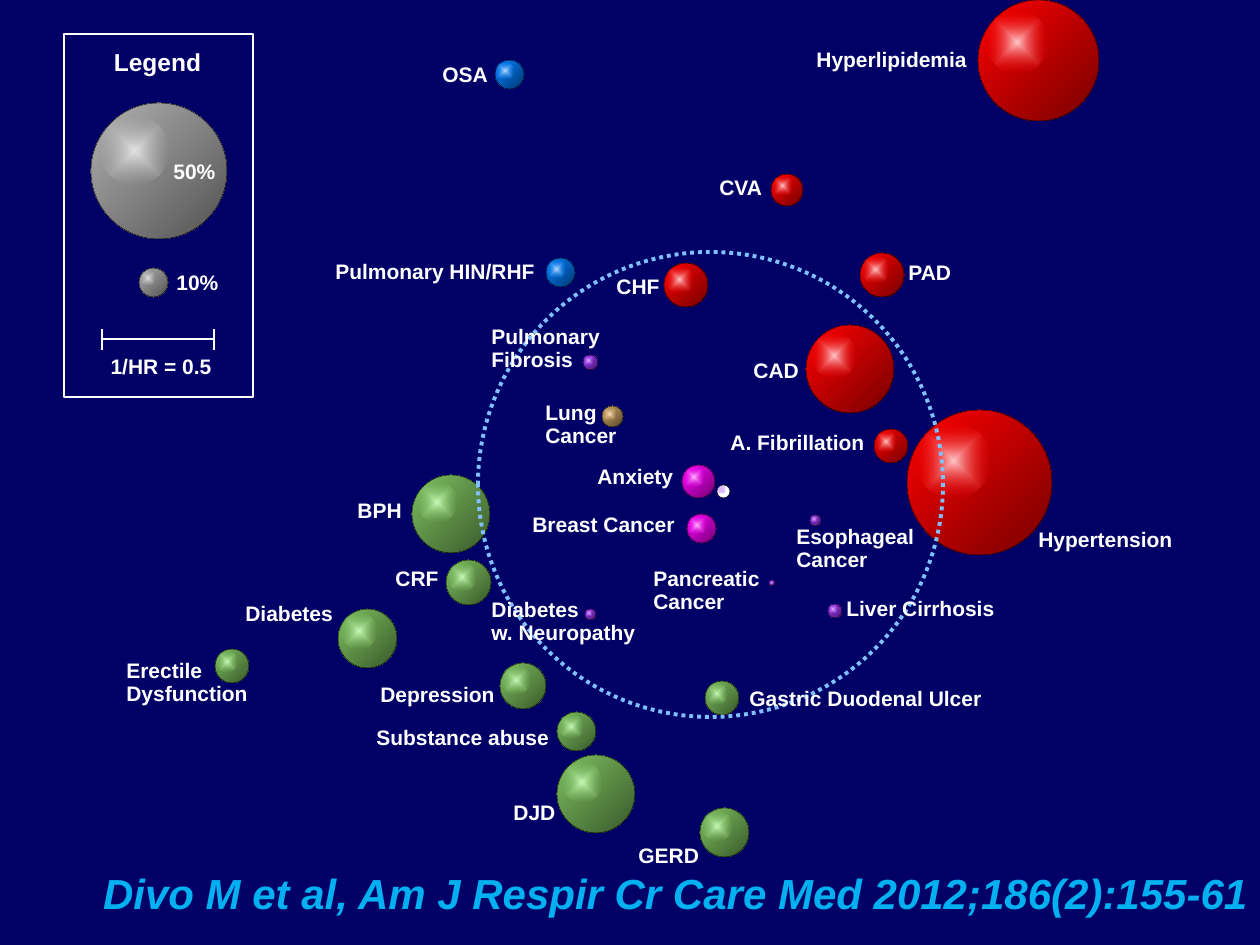
from dataclasses import dataclass
from lxml import etree
from pptx import Presentation
from pptx.dml.color import RGBColor
from pptx.enum.dml import MSO_LINE
from pptx.enum.shapes import MSO_CONNECTOR, MSO_SHAPE
from pptx.enum.text import MSO_AUTO_SIZE, PP_ALIGN
from pptx.oxml import parse_xml
from pptx.oxml.ns import nsdecls, qn
from pptx.util import Pt

SCALE = 914400 / 126
OVAL = MSO_SHAPE.OVAL
RECT = MSO_SHAPE.RECTANGLE
STRAIGHT = MSO_CONNECTOR.STRAIGHT
DOTS = MSO_LINE.ROUND_DOT
GROW = MSO_AUTO_SIZE.SHAPE_TO_FIT_TEXT
LEFT, MID, RIGHT = PP_ALIGN.LEFT, PP_ALIGN.CENTER, PP_ALIGN.RIGHT
LINEAR = '<a:lin ang="2700000" scaled="1"/>'
CENTRAL = '<a:path path="shape"><a:fillToRect l="50000" t="50000" r="50000" b="50000"/></a:path>'

COLORS = {
    "back": "000066", "white": "FFFFFF", "black": "000000",
    "ring": "80C0FF", "cite": "00B0F0",
    "gray": "B2B2B2", "gray_dark": "525252", "gray_glow": "E4E4E4",
    "red": "FF0000", "red_dark": "760000", "red_glow": "FFC9CC",
    "blue": "0080FF", "blue_dark": "003B76", "blue_glow": "BFDFFF",
    "pink": "FF00FF", "pink_dark": "760076", "pink_glow": "FFBDFE",
    "tan": "CCA466", "tan_dark": "5E4C2F", "tan_glow": "FFE2BB",
    "plum": "A338FF", "plum_dark": "4B1A76", "plum_glow": "E4BDFE",
    "green": "7EC160", "green_dark": "3A592C", "green_glow": "C8FBB9",
}


@dataclass
class Ball:
    x: int
    y: int
    size: int
    hue: str
    plain: bool = False


@dataclass
class Label:
    text: str
    x: int
    y: int
    w: int
    h: int = 35


KEYS = [Ball(91, 103, 136, "gray"), Ball(139, 268, 29, "gray")]

BALLS = [
    Ball(664, 263, 44, "red"),
    Ball(771, 174, 32, "red"),
    Ball(806, 325, 88, "red"),
    Ball(907, 410, 145, "red"),
    Ball(860, 253, 44, "red"),
    Ball(874, 429, 34, "red"),
    Ball(978, 0, 121, "red"),
    Ball(495, 60, 29, "blue"),
    Ball(546, 258, 29, "blue"),
    Ball(687, 514, 29, "pink"),
    Ball(682, 465, 33, "pink"),
    Ball(602, 406, 21, "tan"),
    Ball(717, 485, 13, "plum", plain=True),
    Ball(810, 515, 11, "plum"),
    Ball(828, 604, 14, "plum"),
    Ball(769, 580, 6, "plum"),
    Ball(585, 609, 11, "plum"),
    Ball(583, 355, 15, "plum"),
    Ball(705, 681, 34, "green"),
    Ball(557, 712, 39, "green"),
    Ball(500, 663, 46, "green"),
    Ball(446, 560, 45, "green"),
    Ball(338, 609, 59, "green"),
    Ball(412, 475, 78, "green"),
    Ball(700, 808, 49, "green"),
    Ball(215, 649, 34, "green"),
    Ball(557, 755, 78, "green"),
]

LABELS = [
    Label("50%", 161, 155, 81),
    Label("10%", 164, 266, 81),
    Label("Lung Cancer", 533, 396, 129, 58),
    Label("Anxiety", 585, 460, 129),
    Label("Breast Cancer", 520, 508, 189),
    Label("Esophageal Cancer", 784, 520, 151, 58),
    Label("Pancreatic Cancer", 641, 562, 150, 58),
    Label("A. Fibrillation", 718, 426, 169),
    Label("CAD", 741, 354, 83),
    Label("BPH", 345, 494, 83),
    Label("CRF", 383, 562, 84),
    Label("Erectile Dysfunction", 114, 654, 163, 58),
    Label("Diabetes", 233, 597, 174),
    Label("Depression", 368, 678, 174),
    Label("Substance abuse", 364, 721, 212),
    Label("GERD", 626, 839, 106),
    Label("DJD", 501, 796, 84),
    Label("Hypertension", 1026, 523, 188),
    Label("CVA", 707, 171, 83),
    Label("Hyperlipidemia", 804, 43, 193),
    Label("OSA", 430, 58, 83),
    Label("Pulmonary HIN/RHF", 323, 255, 251),
    Label("CHF", 604, 270, 83),
    Label("Liver Cirrhosis", 834, 592, 202),
    Label("PAD", 896, 256, 83),
    Label("Pulmonary Fibrosis", 479, 320, 190, 58),
    Label("Diabetes\nw. Neuropathy", 479, 593, 184, 58),
    Label("Gastric Duodenal Ulcer", 737, 682, 272),
]


def px(n: float) -> int:
    return round(n * SCALE)


def tint(key: str) -> RGBColor:
    return RGBColor.from_string(COLORS[key])


def write(slide, label: Label, size=12, color="white", align=LEFT, slant=False, lead=0.9):
    box = slide.shapes.add_textbox(px(label.x), px(label.y), px(label.w), px(label.h))
    frame = box.text_frame
    frame.word_wrap = True
    frame.auto_size = GROW
    frame.text = label.text
    for para in frame.paragraphs:
        para.alignment = align
        para.line_spacing = lead
        font = para.font
        font.name, font.size = "Arial", Pt(size)
        font.bold, font.italic = True, slant
        font.color.rgb = tint(color)


def shape(slide, kind, x: float, y: float, w: float, h: float, line="", width=0.25):
    item = slide.shapes.add_shape(kind, px(x), px(y), px(w), px(h))
    item.shadow.inherit = False
    item.fill.background()
    if line:
        item.line.color.rgb = tint(line)
        item.line.width = Pt(width)
    else:
        item.line.fill.background()
    return item


def blend(item, start: str, end: str, form: str, alpha=100):
    props = item._element.spPr
    grad = parse_xml(
        f'<a:gradFill {nsdecls("a")} rotWithShape="1"><a:gsLst>'
        f'<a:gs pos="0"><a:srgbClr val="{COLORS[start]}"/></a:gs>'
        f'<a:gs pos="100000"><a:srgbClr val="{COLORS[end]}">'
        f'<a:alpha val="{alpha * 1000}"/></a:srgbClr></a:gs>'
        f'</a:gsLst>{form}</a:gradFill>')
    props.replace(props.find(qn("a:noFill")), grad)


def draw(slide, ball: Ball):
    size, hue = ball.size, ball.hue
    body = shape(slide, OVAL, ball.x, ball.y, size, size, "black")
    if ball.plain:
        body.fill.solid()
        body.fill.fore_color.rgb = tint("white")
    else:
        blend(body, hue, f"{hue}_dark", LINEAR)
    large = size > 75 or hue == "gray"
    dx, dy, part = (0.06, 0.09, 0.52) if large else (0.04, 0.06, 0.63)
    glow = shape(slide, OVAL, ball.x + dx * size, ball.y + dy * size, part * size, part * size)
    blend(glow, f"{hue}_glow", hue, CENTRAL, alpha=0)


def rule(slide, x1: int, y1: int, x2: int, y2: int):
    line = slide.shapes.add_connector(STRAIGHT, px(x1), px(y1), px(x2), px(y2))
    line.line.color.rgb = tint("white")
    line.line.width = Pt(1.5)
    etree.SubElement(line._element.spPr, qn("a:effectLst"))


def main():
    deck = Presentation()
    deck.slide_width, deck.slide_height = px(1260), px(945)
    slide = deck.slides.add_slide(deck.slide_layouts[6])
    slide.background.fill.solid()
    slide.background.fill.fore_color.rgb = tint("back")

    shape(slide, RECT, 64, 34, 189, 363, "white", 1)
    write(slide, Label("Legend", 67, 44, 181, 39), size=14, align=MID)
    write(slide, Label("1/HR = 0.5", 74, 350, 174), align=MID)
    rule(slide, 102, 339, 214, 339)
    for x in (102, 214):
        rule(slide, x, 329, x, 350)

    for ball in KEYS + BALLS:
        draw(slide, ball)
    ring = shape(slide, OVAL, 478, 252, 465, 465, "ring", 2.25)
    ring.line.dash_style = DOTS
    for label in LABELS:
        write(slide, label)
    cite = Label("Divo M et al, Am J Respir Cr Care Med 2012;186(2):155-61", 1, 861, 1259, 63)
    write(slide, cite, size=24, color="cite", align=RIGHT, slant=True, lead=1.0)
    deck.save("out.pptx")


if __name__ == "__main__":
    main()
